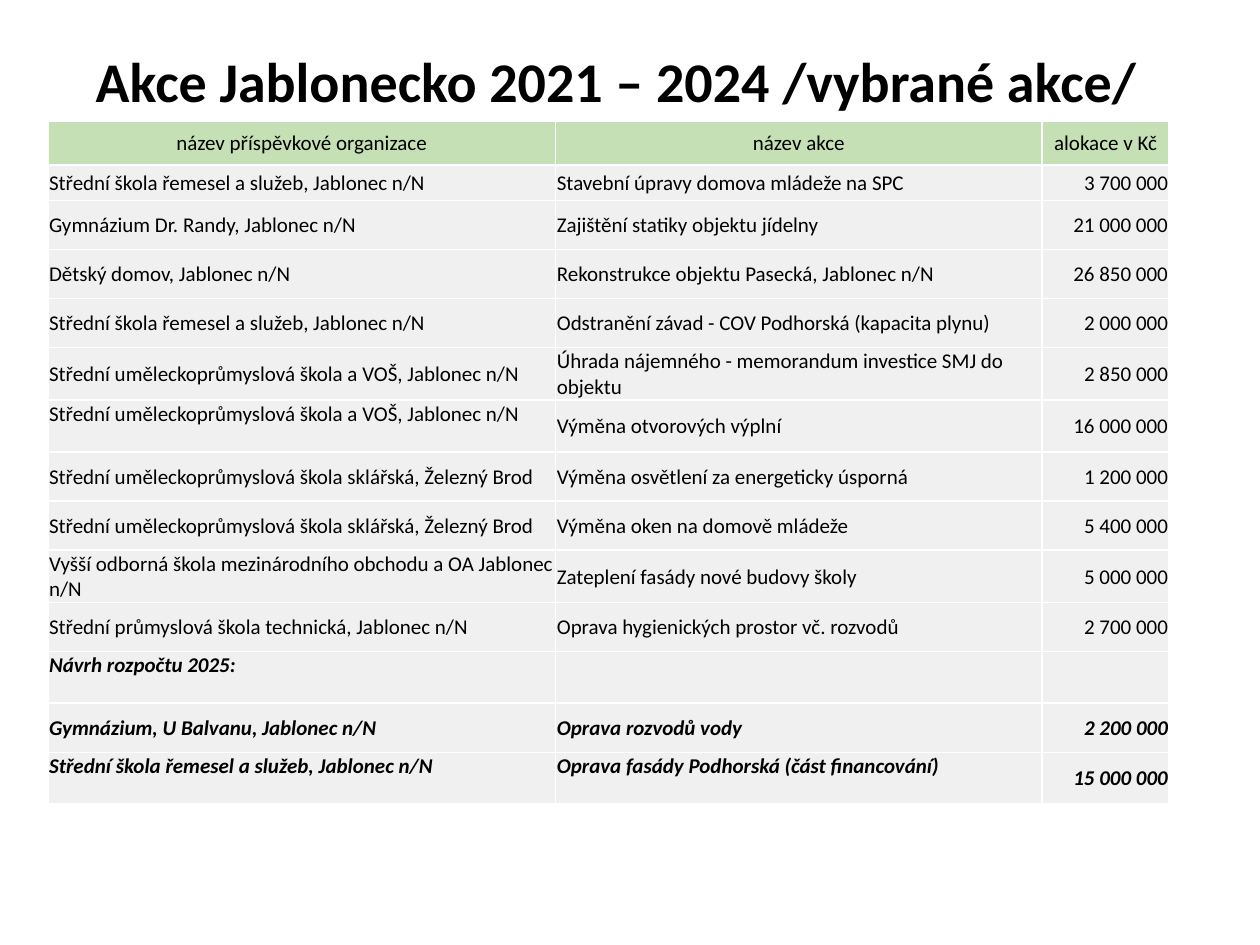
from lxml import etree
from pptx import Presentation
from pptx.dml.color import RGBColor
from pptx.enum.text import MSO_ANCHOR, PP_ALIGN
from pptx.oxml.ns import qn
from pptx.util import Inches, Pt

LEFT, CENTER, RIGHT = PP_ALIGN.LEFT, PP_ALIGN.CENTER, PP_ALIGN.RIGHT
TOP, MIDDLE = MSO_ANCHOR.TOP, MSO_ANCHOR.MIDDLE
TITLE_ONLY = 5
FONT = "Calibri"
COLORS = {"text": "000000", "header": "C5E0B4", "body": "F0F0F0", "border": "FFFFFF"}

# Table content
CRAFTS = "Střední škola řemesel a služeb, Jablonec n/N"
ARTS = "Střední uměleckoprůmyslová škola a VOŠ, Jablonec n/N"
GLASS = "Střední uměleckoprůmyslová škola sklářská, Železný Brod"
HEADER = ("název příspěvkové organizace", "název akce", "alokace v Kč")
PROJECTS = [
    (CRAFTS, "Stavební úpravy domova mládeže na SPC", "3 700 000"),
    ("Gymnázium Dr. Randy, Jablonec n/N", "Zajištění statiky objektu jídelny", "21 000 000"),
    ("Dětský domov, Jablonec n/N", "Rekonstrukce objektu Pasecká, Jablonec n/N", "26 850 000"),
    (CRAFTS, "Odstranění závad - COV Podhorská (kapacita plynu)", "2 000 000"),
    (ARTS, "Úhrada nájemného - memorandum investice SMJ do objektu", "2 850 000"),
    (ARTS, "Výměna otvorových výplní", "16 000 000"),
    (GLASS, "Výměna osvětlení za energeticky úsporná", "1 200 000"),
    (GLASS, "Výměna oken na domově mládeže", "5 400 000"),
    ("Vyšší odborná škola mezinárodního obchodu a OA Jablonec n/N",
     "Zateplení fasády nové budovy školy", "5 000 000"),
    ("Střední průmyslová škola technická, Jablonec n/N",
     "Oprava hygienických prostor vč. rozvodů", "2 700 000"),
]
BUDGET_2025 = [
    ("Návrh rozpočtu 2025:", "", ""),
    ("Gymnázium, U Balvanu, Jablonec n/N", "Oprava rozvodů vody", "2 200 000"),
    (CRAFTS, "Oprava fasády Podhorská (část financování)", "15 000 000"),
]

# Table grid, in inches
COLUMN_WIDTHS = (4.03, 3.86, 1.01)
HEADER_HEIGHT, FIRST_HEIGHT, ROW_HEIGHT, TALL_HEIGHT = 0.35, 0.28, 0.39, 0.41
TALL_ROWS = {5, 6, 9, 11, 13}
TOP_CELLS = {(6, 0), (11, 0), (13, 0), (13, 1)}


def style_font(font, size, bold=False, italic=False):
    font.name, font.size = FONT, Pt(size)
    font.bold, font.italic = bold, italic
    font.color.rgb = RGBColor.from_string(COLORS["text"])


def add_title(slide, left, top, width, height):
    title = slide.shapes.title
    title.left, title.top, title.width, title.height = map(Inches, (left, top, width, height))
    frame = title.text_frame
    frame.word_wrap = True
    frame.vertical_anchor = TOP
    frame.text = "Akce Jablonecko 2021 – 2024 /vybrané akce/"
    heading = frame.paragraphs[0]
    heading.alignment = LEFT
    heading.line_spacing = 1.0
    style_font(heading.font, 32, bold=True)


def add_borders(cell):
    properties = cell._tc.get_or_add_tcPr()
    for side in ("a:lnL", "a:lnR", "a:lnT", "a:lnB"):
        line = etree.SubElement(properties, qn(side), w=str(Pt(1)))
        fill = etree.SubElement(line, qn("a:solidFill"))
        etree.SubElement(fill, qn("a:srgbClr"), val=COLORS["border"])


def fill_cell(cell, text, fill, alignment, anchor, emphasis):
    add_borders(cell)
    cell.fill.solid()
    cell.fill.fore_color.rgb = RGBColor.from_string(fill)
    cell.margin_left = cell.margin_right = cell.margin_top = Inches(0.01)
    cell.margin_bottom = 0
    cell.vertical_anchor = anchor
    cell.text = text
    content = cell.text_frame.paragraphs[0]
    content.alignment = alignment
    style_font(content.font, 12, bold=emphasis, italic=emphasis)


def add_projects_table(slide, left, top):
    rows = [HEADER, *PROJECTS, *BUDGET_2025]
    heights = [TALL_HEIGHT if r in TALL_ROWS else ROW_HEIGHT for r in range(len(rows))]
    heights[:2] = HEADER_HEIGHT, FIRST_HEIGHT
    table = slide.shapes.add_table(
        len(rows), len(HEADER), Inches(left), Inches(top),
        Inches(sum(COLUMN_WIDTHS)), Inches(sum(heights))).table
    table.first_row = table.horz_banding = False
    for column, width in zip(table.columns, COLUMN_WIDTHS):
        column.width = Inches(width)
    for r, texts in enumerate(rows):
        table.rows[r].height = Inches(heights[r])
        fill = COLORS["body" if r else "header"]
        alignments = (LEFT, LEFT, RIGHT) if r else (CENTER,) * 3
        for c, (text, alignment) in enumerate(zip(texts, alignments)):
            anchor = TOP if (r, c) in TOP_CELLS else MIDDLE
            fill_cell(table.cell(r, c), text, fill, alignment, anchor, r > len(PROJECTS))


def main():
    prs = Presentation()
    prs.slide_width, prs.slide_height = Inches(10), Inches(7.5)
    slide = prs.slides.add_slide(prs.slide_layouts[TITLE_ONLY])
    # Title on one line, clear of the table below
    add_title(slide, 0.66, 0.32, 8.96, 0.64)
    # Projects and the 2025 budget
    add_projects_table(slide, 0.38, 0.96)
    prs.save("out.pptx")


if __name__ == "__main__":
    main()
